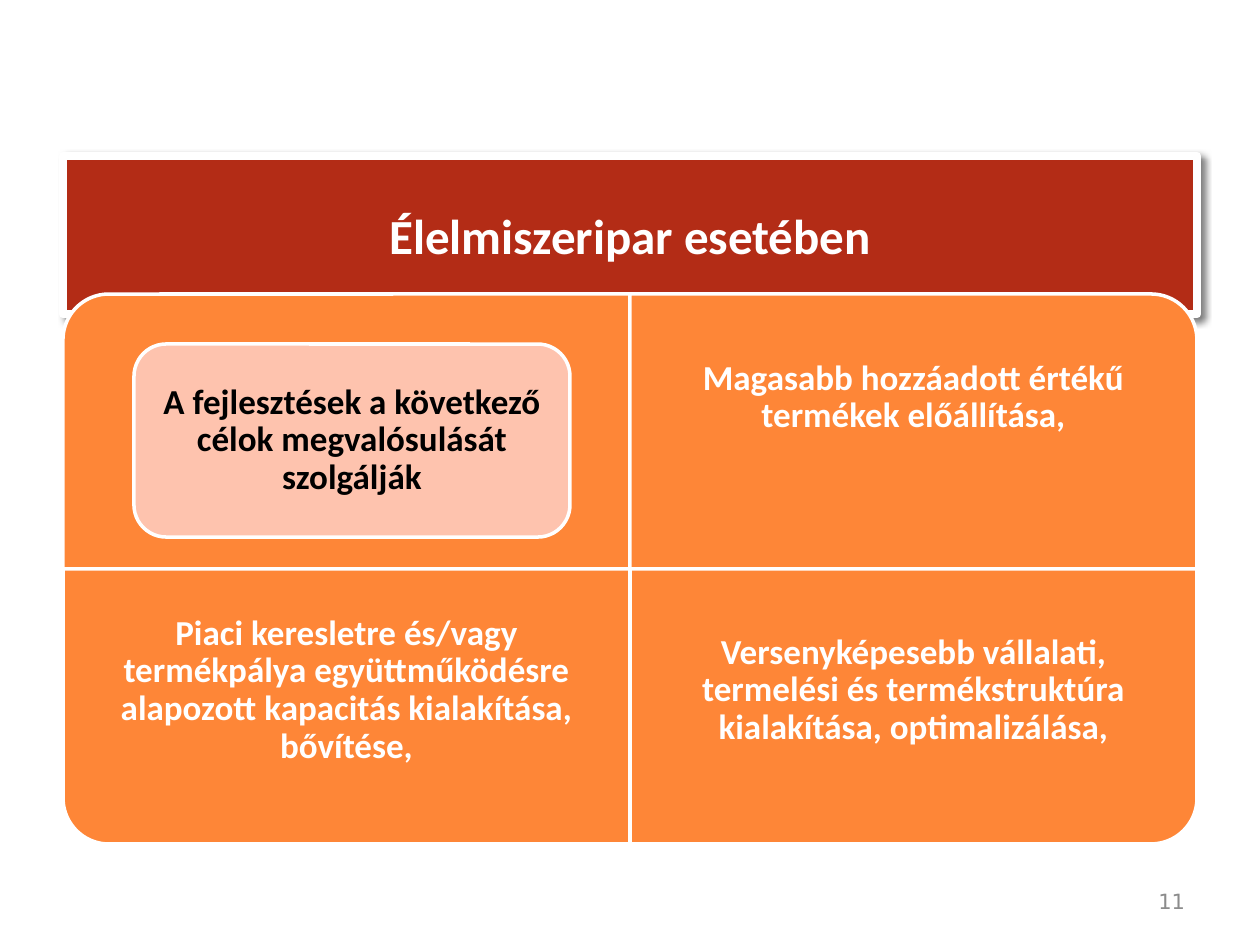
from dataclasses import dataclass

import lxml.etree
import pptx
import pptx.dml.color
import pptx.enum.shapes
import pptx.enum.text
import pptx.oxml
import pptx.oxml.ns
import pptx.util

SCALE = 914400 / 126  # EMU per px
KIND = pptx.enum.shapes.MSO_SHAPE
ALIGN = pptx.enum.text.PP_ALIGN
WHITE = "FFFFFF"
SHADOW = (
    f'<a:effectLst {pptx.oxml.ns.nsdecls("a")}>'
    '<a:outerShdw blurRad="50800" dist="38100" dir="2700000" algn="tl" rotWithShape="0">'
    '<a:srgbClr val="000000"><a:alpha val="50000"/></a:srgbClr>'
    '</a:outerShdw></a:effectLst>'
)


@dataclass
class Box:
    left: int
    top: int
    width: int
    height: int

    def emu(self) -> list[int]:
        return [px(n) for n in (self.left, self.top, self.width, self.height)]


@dataclass
class Cell:
    col: int
    row: int
    turn: int
    text: str = ""
    lift: int = 0


LEFT, TOP, WIDTH, HEIGHT = 63, 294, 567, 275
LABEL = 207
CELLS = [
    Cell(0, 0, 270),
    Cell(1, 0, 0, "Magasabb hozzáadott értékű termékek előállítása,"),
    Cell(0, 1, 180, "Piaci keresletre és/vagy termékpálya együttműködésre "
                    "alapozott kapacitás kialakítása, bővítése,", 18),
    Cell(1, 1, 90, "Versenyképesebb vállalati, termelési és termékstruktúra "
                   "kialakítása, optimalizálása,", 18),
]


def px(count: int) -> int:
    return round(count * SCALE)


def color(code: str) -> pptx.dml.color.RGBColor:
    return pptx.dml.color.RGBColor.from_string(code)


def paint(shape, fill: str, line: int) -> None:
    shape.fill.solid()
    shape.fill.fore_color.rgb = color(fill)
    shape.line.color.rgb = color(WHITE)
    shape.line.width = pptx.util.Pt(line)


def write(shape, text: str, size: int, ink: str, inset: int = 12, bold: bool = True,
          face: str = "Calibri", align=ALIGN.CENTER, space: float = 0.9) -> None:
    frame = shape.text_frame
    frame.word_wrap = True
    frame.vertical_anchor = pptx.enum.text.MSO_ANCHOR.MIDDLE
    frame.margin_left = frame.margin_right = px(inset)
    frame.margin_top = frame.margin_bottom = px(inset)
    frame.text = text
    para = frame.paragraphs[0]
    para.alignment = align
    para.line_spacing = space
    para.font.name = face
    para.font.size = pptx.util.Pt(size)
    para.font.bold = bold
    para.font.color.rgb = color(ink)


def panel(slide, kind, box: Box, fill: str):
    shape = slide.shapes.add_shape(kind, *box.emu())
    shape.shadow.inherit = False
    paint(shape, fill, 2)
    return shape


def draw(slide, cell: Cell) -> None:
    """Draw one quarter, turned so that its round corner faces outward."""
    left, top = LEFT + cell.col * WIDTH, TOP + cell.row * HEIGHT
    box = Box(left, top, WIDTH, HEIGHT)
    if cell.turn % 180:
        shift = (WIDTH - HEIGHT) // 2
        box = Box(left + shift, top - shift, HEIGHT, WIDTH)
    panel(slide, KIND.ROUND_1_RECTANGLE, box, "FE8637").rotation = cell.turn
    if cell.text:
        area = Box(left, top + cell.lift, WIDTH, LABEL)
        write(slide.shapes.add_textbox(*area.emu()), cell.text, 20, WHITE, 20)


def main() -> None:
    deck = pptx.Presentation()
    deck.slide_width, deck.slide_height = px(1260), px(945)
    slide = deck.slides.add_slide(deck.slide_layouts[5])

    title = slide.shapes.title
    title.left, title.top, title.width, title.height = Box(63, 156, 1134, 158).emu()
    paint(title, "B32C16", 5)
    title.element.spPr.append(pptx.oxml.parse_xml(SHADOW))
    write(title, "Élelmiszeripar esetében", 28, WHITE, space=1)

    for cell in CELLS:
        draw(slide, cell)

    center = panel(slide, KIND.ROUNDED_RECTANGLE, Box(134, 344, 436, 193), "FEC3AE")
    write(center, "A fejlesztések a következő célok megvalósulását szolgálják",
          20, "000000", 10)

    number = slide.shapes.add_textbox(*Box(903, 876, 294, 50).emu())
    write(number, "11", 12, "8C8C8C", bold=False, face="DejaVu Sans",
          align=ALIGN.RIGHT, space=1)
    deck.save("out.pptx")


if __name__ == "__main__":
    main()
